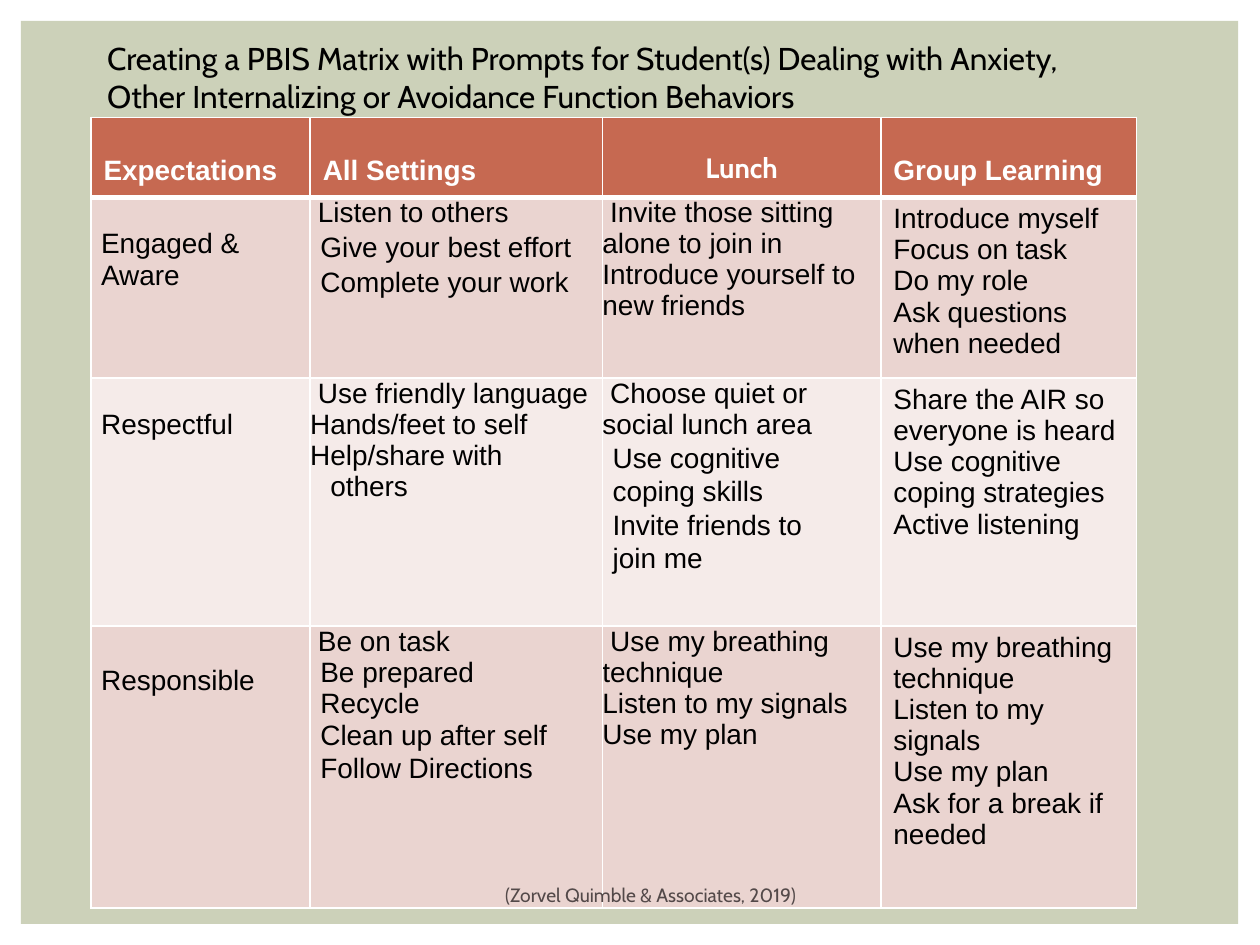
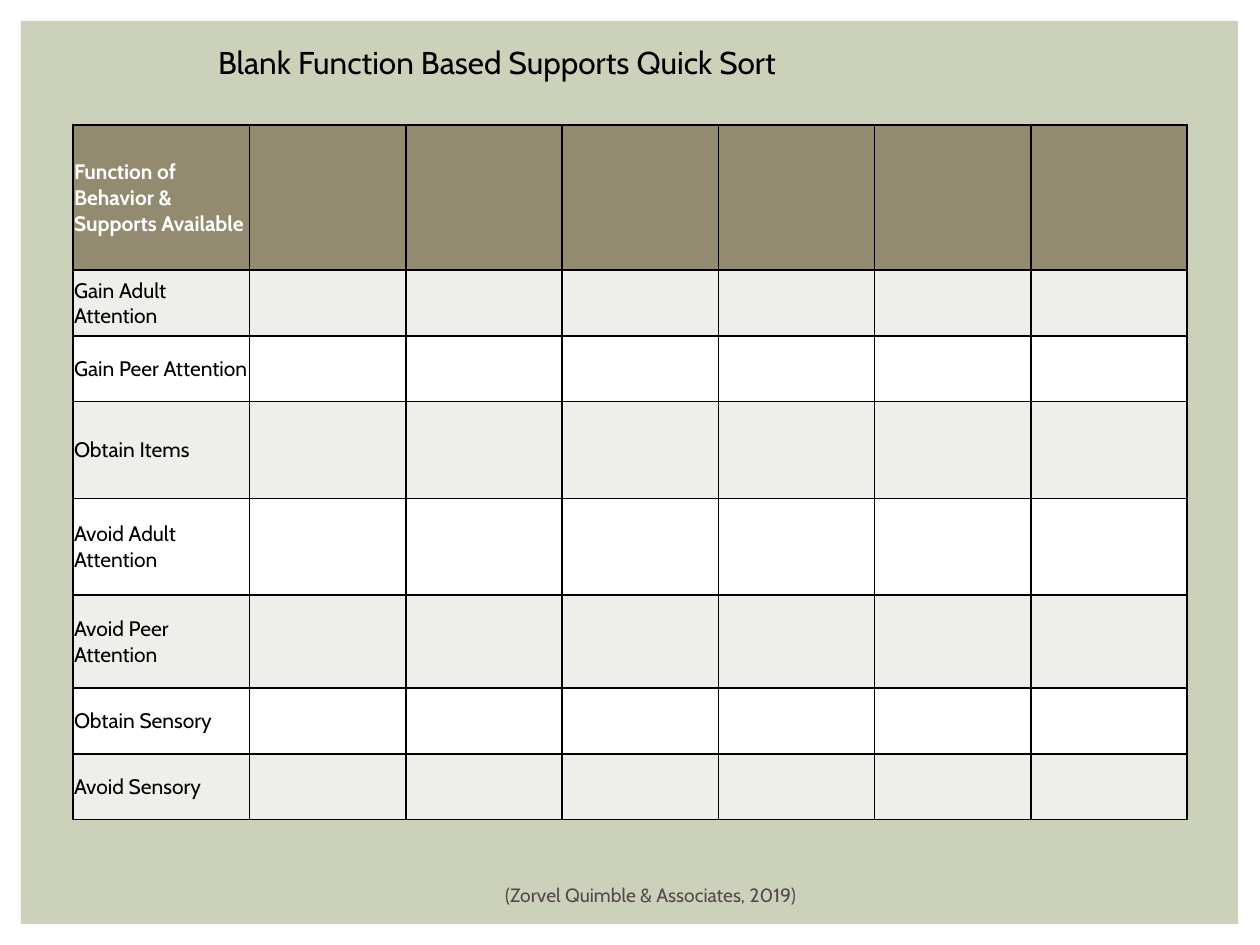
from pptx import Presentation
from pptx.dml.color import RGBColor
from pptx.enum import shapes, text
from pptx.oxml.ns import qn
from pptx.util import Pt
from lxml import etree

SAGE = RGBColor(0xCC, 0xD1, 0xB9)
RUST = RGBColor(0xC6, 0x69, 0x51)
ROSE = RGBColor(0xEA, 0xD4, 0xD0)
BLUSH = RGBColor(0xF5, 0xEB, 0xE9)
OLIVE = RGBColor(0x92, 0x8B, 0x70)
PALE = RGBColor(0xEE, 0xEE, 0xEB)
GREY = RGBColor(0x53, 0x49, 0x49)
WHITE = RGBColor(0xFF, 0xFF, 0xFF)
BLACK = RGBColor(0, 0, 0)

# Paragraph styles: left, first line, right, space before, line spacing
STYLES = {
    "plain": (0, 0, 0, 0, 1),
    "lead": (0, 4.4, 0, 0.4, 1),
    "in": (5.8, 0, 0, 0, 1),
    "gap": (5.8, 0, 0, 0.8, 1),
    "loose": (5.8, 0, 0, 0.8, 1.08),
    "tight": (5.8, 0, 36, 0, 1.08),
    "deep": (11.5, 0, 0, 0, 1),
}

HEADS = ["Expectations", "All Settings", "Lunch", "Group Learning"]
MATRIX = [
    [
        [("in", "Engaged &"), ("in", "Aware")],
        [("lead", "Listen to others"), ("loose", "Give your best effort"),
         ("loose", "Complete your work")],
        [("lead", "Invite those sitting alone to join in"),
         ("plain", "Introduce yourself to new friends")],
        [("plain", "Introduce myself"), ("plain", "Focus on task"),
         ("plain", "Do my role"), ("plain", "Ask questions when needed")],
    ],
    [
        [("in", "Respectful")],
        [("lead", "Use friendly language"), ("plain", "Hands/feet to self"),
         ("plain", "Help/share with"), ("deep", "others")],
        [("lead", "Choose quiet or social lunch area"),
         ("tight", "Use cognitive coping skills"),
         ("tight", "Invite friends to join me")],
        [("plain", "Share the AIR so everyone is heard"),
         ("plain", "Use cognitive coping strategies"),
         ("plain", "Active listening")],
    ],
    [
        [("in", "Responsible")],
        [("lead", "Be on task"), ("in", "Be prepared"), ("in", "Recycle"),
         ("gap", "Clean up after self"), ("gap", "Follow Directions")],
        [("lead", "Use my breathing technique"),
         ("plain", "Listen to my signals"), ("plain", "Use my plan")],
        [("plain", "Use my breathing technique"),
         ("plain", "Listen to my signals"), ("plain", "Use my plan"),
         ("plain", "Ask for a break if needed")],
    ],
]
SORTS = ["Function of Behavior & Supports Available", "Gain Adult Attention",
         "Gain Peer Attention", "Obtain Items", "Avoid Adult Attention",
         "Avoid Peer Attention", "Obtain Sensory", "Avoid Sensory"]


def write(para, words, size, color, font="Cabin", bold=False):
    run = para.add_run()
    run.text = words
    run.font.size = Pt(size)
    run.font.name = font
    run.font.bold = bold
    run.font.color.rgb = color


def grid(slide, left, top, cols, rows, line, fills):
    """Add a table with ruled cells, one fill per row; return the table."""
    table = slide.shapes.add_table(len(rows), len(cols), Pt(left), Pt(top),
                                   Pt(sum(cols)), Pt(sum(rows))).table
    for col, width in zip(table.columns, cols):
        col.width = Pt(width)
    for num, (row, high) in enumerate(zip(table.rows, rows)):
        row.height = Pt(high)
        for cell in row.cells:
            props = cell._tc.get_or_add_tcPr()
            for side in ("L", "R", "T", "B"):
                thick = line == WHITE and (num, side) in [(0, "B"), (1, "T")]
                edge = etree.SubElement(props, qn("a:ln" + side),
                                        w=str(Pt(3 if thick else 1)))
                fill = etree.SubElement(edge, qn("a:solidFill"))
                etree.SubElement(fill, qn("a:srgbClr"), val=str(line))
            cell.fill.solid()
            cell.fill.fore_color.rgb = fills[num]
    return table


deck = Presentation()
deck.slide_width, deck.slide_height = Pt(720), Pt(540)
layout = deck.slide_layouts[5]

titles = [
    ("Creating a PBIS Matrix with Prompts for Student(s) Dealing with Anxiety, "
     "Other Internalizing or Avoidance Function Behaviors", 54, 18.7, 581, 51),
    ("Blank Function Based Supports Quick Sort", 117.4, 20.9, 427, 29),
]
pages = []
for words, left, top, width, high in titles:
    slide = deck.slides.add_slide(layout)
    pages.append(slide)
    title = slide.shapes.title
    title.left, title.top = Pt(left), Pt(top)
    title.width, title.height = Pt(width), Pt(high)
    frame = title.text_frame
    frame.auto_size = text.MSO_AUTO_SIZE.NONE
    frame.vertical_anchor = text.MSO_ANCHOR.TOP
    frame.paragraphs[0].alignment = text.PP_ALIGN.LEFT
    write(frame.paragraphs[0], words, 18, BLACK)

# The sage panel belongs to the layout, behind both slides
panel = pages[0].shapes.add_shape(shapes.MSO_SHAPE.RECTANGLE, Pt(12), Pt(12),
                                  Pt(695.5), Pt(516))
panel.shadow.inherit = False
panel.fill.solid()
panel.fill.fore_color.rgb = SAGE
panel.line.fill.background()
layout.shapes._spTree.insert(2, panel._element)

# Expectations matrix
table = grid(pages[0], 52, 67, [125.3, 167, 159.1, 146.2],
             [45.7, 103.4, 141.7, 161.1], WHITE, [RUST, ROSE, BLUSH, ROSE])
for col, head in enumerate(HEADS):
    cell = table.cell(0, col)
    para = cell.text_frame.paragraphs[0]
    lunch = head == "Lunch"
    cell.margin_top = Pt(19.4 if lunch else 21.8)
    cell.margin_bottom = Pt(0)
    if lunch:
        cell.margin_left = cell.margin_right = Pt(0)
        para.alignment = text.PP_ALIGN.CENTER
    write(para, head, 16, WHITE, "Cabin" if lunch else "Arial", True)

for row, cells in enumerate(MATRIX, 1):
    for col, lines in enumerate(cells):
        cell = table.cell(row, col)
        if col < 3:
            cell.margin_left = cell.margin_right = Pt(0)
            cell.margin_top = cell.margin_bottom = Pt(0)
        if col == 0:
            cell.margin_top = Pt(22.6 if row == 3 else 18)
        frame = cell.text_frame
        for num, (style, words) in enumerate(lines):
            para = frame.add_paragraph() if num else frame.paragraphs[0]
            left, first, right, before, space = STYLES[style]
            para.space_before = Pt(before)
            para.line_spacing = float(space)
            props = para._p.get_or_add_pPr()
            props.set("marL", str(Pt(left)))
            props.set("marR", str(Pt(right)))
            props.set("indent", str(Pt(first)))
            write(para, words, 16, BLACK, "Arial")

# Blank quick sort
table = grid(pages[1], 41.8, 71.3, [100.8] + [89.3] * 6,
             [83, 37.6, 37.6, 55.3, 55.3, 53.2, 37.6, 37.6], BLACK,
             [OLIVE] + [PALE, WHITE] * 3 + [PALE])
for row, words in enumerate(SORTS):
    cell = table.cell(row, 0)
    cell.vertical_anchor = text.MSO_ANCHOR.MIDDLE
    cell.margin_left = cell.margin_right = cell.margin_top = Pt(0.5)
    cell.margin_bottom = Pt(0)
    write(cell.text_frame.paragraphs[0], words, 12,
          BLACK if row else WHITE, bold=row == 0)

for slide in pages:
    frame = slide.shapes.add_textbox(Pt(239.8), Pt(500.4), Pt(264.2),
                                     Pt(21.6)).text_frame
    frame.word_wrap = True
    frame.vertical_anchor = text.MSO_ANCHOR.MIDDLE
    frame.paragraphs[0].alignment = text.PP_ALIGN.CENTER
    write(frame.paragraphs[0], "(Zorvel Quimble & Associates, 2019)", 11, GREY)

deck.save("out.pptx")
